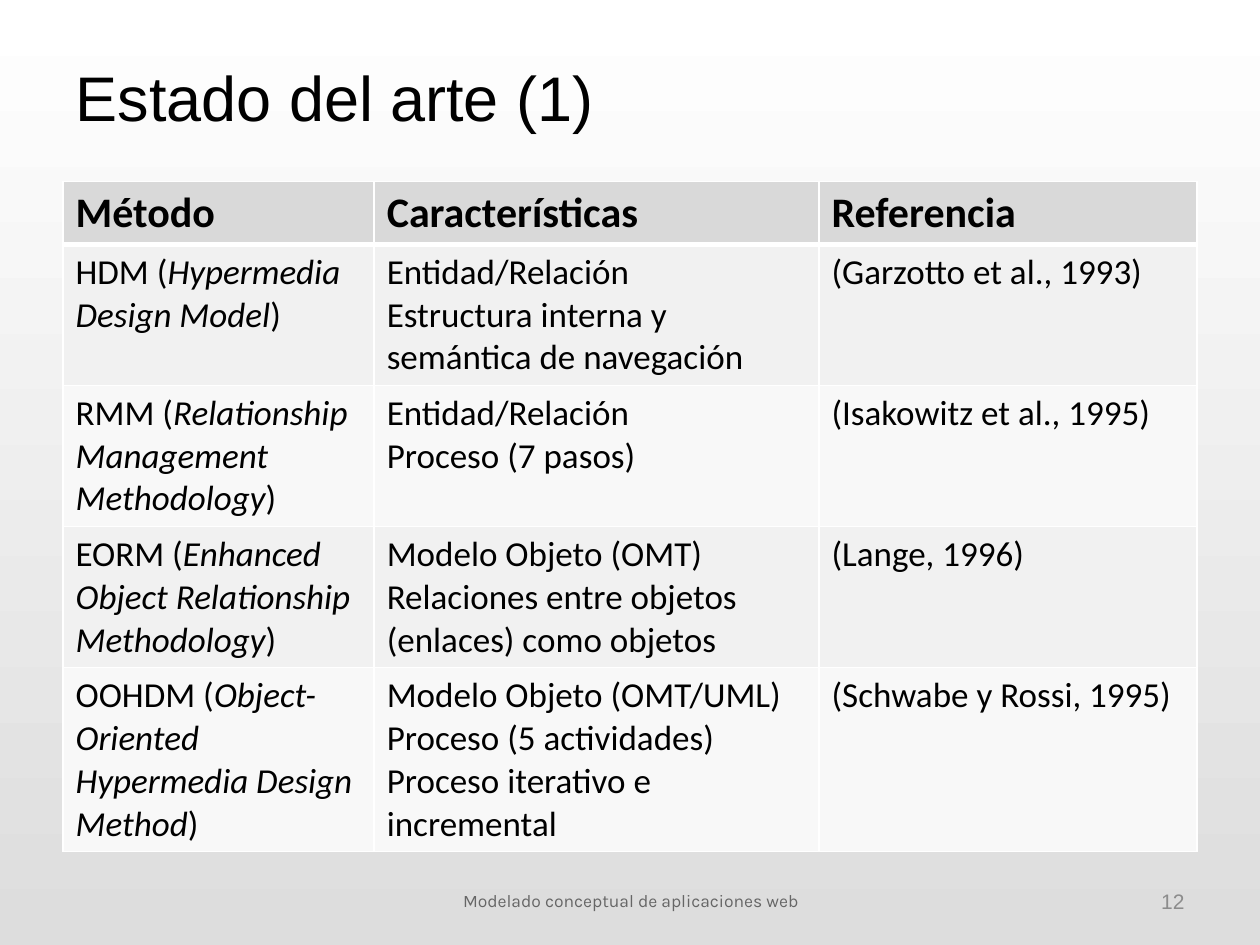
import pptx
import pptx.util
import pptx.dml.color
import pptx.enum.text
import pptx.oxml
import pptx.oxml.ns

Inches = pptx.util.Inches
Pt = pptx.util.Pt
RGBColor = pptx.dml.color.RGBColor
Align = pptx.enum.text.PP_ALIGN
Anchor = pptx.enum.text.MSO_ANCHOR

BLACK = RGBColor(0x00, 0x00, 0x00)
WHITE = RGBColor(0xFF, 0xFF, 0xFF)
BACKGROUND_END = RGBColor(0xDD, 0xDD, 0xDD)
HEADER_FILL = RGBColor(0xD9, 0xD9, 0xD9)
BAND_FILLS = (RGBColor(0xF1, 0xF1, 0xF1), RGBColor(0xF8, 0xF8, 0xF8))
NUMBER_GRAY = RGBColor(0x8C, 0x8C, 0x8C)
FOOTER_GRAY = RGBColor(0x66, 0x66, 0x66)

COLUMN_WIDTHS = (2.47, 3.53, 3)
ROW_HEIGHTS = (0.5, 1.12, 1.12, 1.12, 1.46)
HEADERS = ("Método", "Características", "Referencia")
METHODS = (
    ("HDM", "Hypermedia Design Model",
     ("Entidad/Relación", "Estructura interna y semántica de navegación"),
     "(Garzotto et al., 1993)"),
    ("RMM", "Relationship Management Methodology",
     ("Entidad/Relación", "Proceso (7 pasos)"),
     "(Isakowitz et al., 1995)"),
    ("EORM", "Enhanced Object Relationship Methodology",
     ("Modelo Objeto (OMT)", "Relaciones entre objetos (enlaces) como objetos"),
     "(Lange, 1996)"),
    ("OOHDM", "Object-Oriented Hypermedia Design Method",
     ("Modelo Objeto (OMT/UML)", "Proceso (5 actividades)",
      "Proceso iterativo e incremental"),
     "(Schwabe y Rossi, 1995)"),
)


def set_background(slide):
    fill = slide.background.fill
    fill.gradient()
    fill.gradient_angle = 270
    for stop, color in zip(fill.gradient_stops, (WHITE, BACKGROUND_END)):
        stop.color.rgb = color


def add_run(paragraph, text, font_name, size, color, bold=False, italic=False):
    run = paragraph.add_run()
    run.text = text
    font = run.font
    font.name, font.size, font.bold, font.italic = font_name, Pt(size), bold, italic
    font.color.rgb = color


def place(shape, left, top, width, height):
    shape.left, shape.top = Inches(left), Inches(top)
    shape.width, shape.height = Inches(width), Inches(height)


def add_title(slide, text):
    title = slide.shapes.title
    place(title, 0.5, 0.14, 6.43, 1.25)
    frame = title.text_frame
    frame.auto_size = pptx.enum.text.MSO_AUTO_SIZE.NONE
    frame.vertical_anchor = Anchor.MIDDLE
    frame.paragraphs[0].alignment = Align.LEFT
    add_run(frame.paragraphs[0], text, "Arial", 36, BLACK)


def add_footer_text(slide, text, left, width, alignment, font_name, size, color):
    box = slide.shapes.add_textbox(Inches(left), Inches(6.95), Inches(width), Inches(0.4))
    frame = box.text_frame
    frame.word_wrap = True
    frame.vertical_anchor = Anchor.MIDDLE
    frame.paragraphs[0].alignment = alignment
    add_run(frame.paragraphs[0], text, font_name, size, color)


def set_borders(cell, top=1, bottom=1):
    """Draw white cell borders; top and bottom are widths in points."""
    properties = cell._tc.get_or_add_tcPr()
    for side, width in (("L", 1), ("R", 1), ("T", top), ("B", bottom)):
        properties.append(pptx.oxml.parse_xml(
            f'<a:ln{side} {pptx.oxml.ns.nsdecls("a")} w="{Pt(width)}">'
            f'<a:solidFill><a:srgbClr val="{WHITE}"/></a:solidFill></a:ln{side}>'))


def fill_cell(cell, paragraphs, size, bold=False):
    """Write paragraphs, each a list of (text, italic) runs."""
    frame = cell.text_frame
    for index, runs in enumerate(paragraphs):
        paragraph = frame.add_paragraph() if index else frame.paragraphs[0]
        for text, italic in runs:
            add_run(paragraph, text, "Calibri", size, BLACK, bold, italic)


def add_methods_table(slide):
    table = slide.shapes.add_table(
        len(ROW_HEIGHTS), len(COLUMN_WIDTHS), Inches(0.5), Inches(1.44),
        Inches(sum(COLUMN_WIDTHS)), Inches(sum(ROW_HEIGHTS))).table
    for column, width in zip(table.columns, COLUMN_WIDTHS):
        column.width = Inches(width)
    for row_index, (row, height) in enumerate(zip(table.rows, ROW_HEIGHTS)):
        row.height = Inches(height)
        for cell in row.cells:
            set_borders(cell, top=3 if row_index == 1 else 1,
                        bottom=3 if row_index == 0 else 1)
            cell.fill.solid()
            cell.fill.fore_color.rgb = (
                BAND_FILLS[(row_index - 1) % 2] if row_index else HEADER_FILL)
    for column_index, header in enumerate(HEADERS):
        fill_cell(table.cell(0, column_index), [[(header, False)]], 24, bold=True)
    for row_index, (acronym, name, features, reference) in enumerate(METHODS, start=1):
        contents = (
            [[(f"{acronym} (", False), (name, True), (")", False)]],
            [[(feature, False)] for feature in features],
            [[(reference, False)]],
        )
        for column_index, paragraphs in enumerate(contents):
            fill_cell(table.cell(row_index, column_index), paragraphs, 20)


def main():
    presentation = pptx.Presentation()
    presentation.slide_width = Inches(10)
    presentation.slide_height = Inches(7.5)
    slide = presentation.slides.add_slide(presentation.slide_layouts[5])
    set_background(slide)
    add_title(slide, "Estado del arte (1)")
    add_footer_text(slide, "12", 7.17, 2.33, Align.RIGHT, "Arial", 12, NUMBER_GRAY)
    add_footer_text(slide, "Modelado conceptual de aplicaciones web", 3.42, 3.17,
                    Align.CENTER, "Karla", 10, FOOTER_GRAY)
    add_methods_table(slide)
    presentation.save("out.pptx")


if __name__ == "__main__":
    main()
